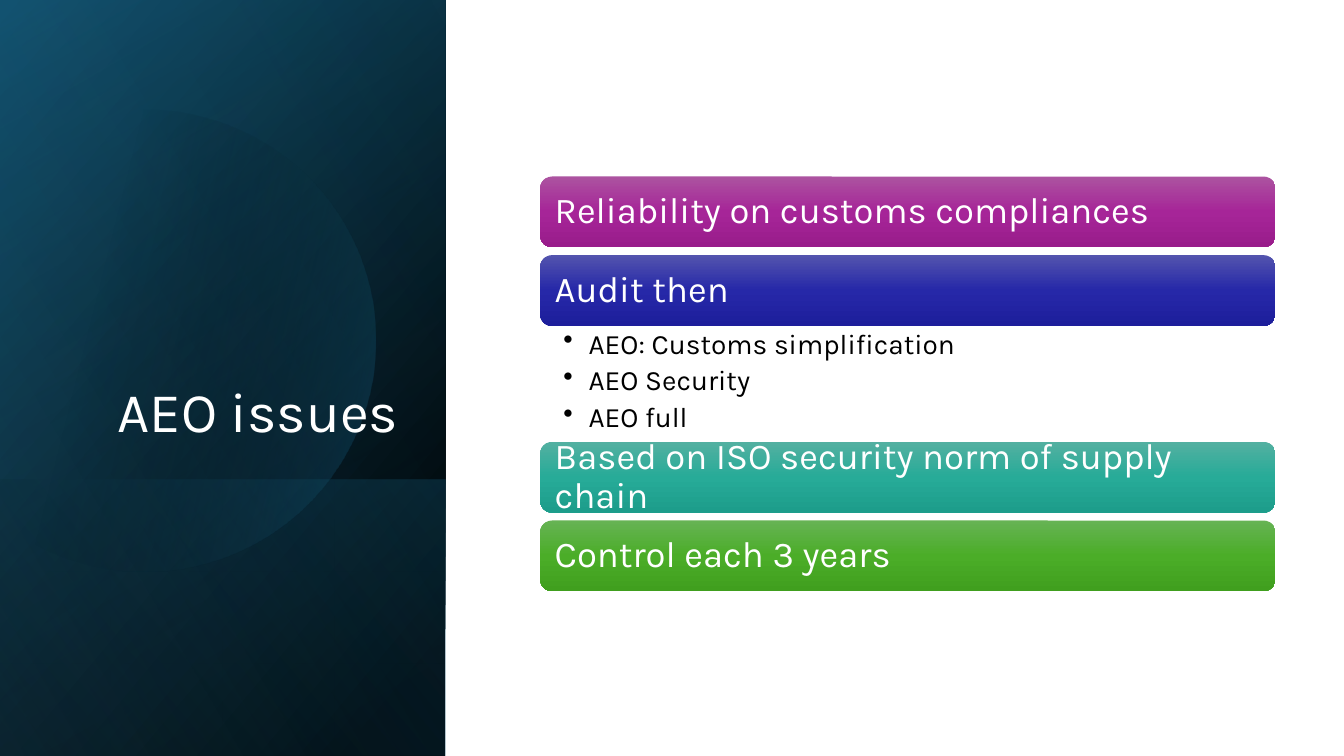
from math import acos, cos, sin

from pptx import Presentation
from pptx.dml.color import RGBColor
from pptx.enum.shapes import MSO_SHAPE as Shape
from pptx.enum.text import MSO_ANCHOR as Anchor, PP_ALIGN as Align
from pptx.oxml import parse_xml
from pptx.oxml.ns import nsdecls, qn
from pptx.util import Inches, Pt


def colour(code):
    """Turn a hex string into a colour."""
    return RGBColor.from_string(code)


class Sheet:
    """Holds the style and the current slide, on a grid of 100 columns by 100 rows."""

    font = "Karla"
    white = "FFFFFF"
    black = "000000"

    def __init__(self, deck):
        """Add a blank page and work out the grid."""
        self.page = deck.slides.add_slide(deck.slide_layouts[6])
        self.column = deck.slide_width / 100
        self.row = deck.slide_height / 100

    def place(self, left, top, width, height):
        """Turn columns and rows into lengths."""
        return [round(n * unit) for n, unit in zip((left, top, width, height), (self.column, self.row) * 2)]

    def shade(self, shape, stops, angle):
        """Fill a shape with a linear gradient of (position, colour, opacity) stops."""
        shape.shadow.inherit = False
        shape.line.fill.background()
        shape.fill.background()
        marks = "".join(
            f'<a:gs pos="{position * 1000}"><a:srgbClr val="{code}">'
            f'<a:alpha val="{opacity * 1000}"/></a:srgbClr></a:gs>'
            for position, code, opacity in stops
        )
        gradient = parse_xml(
            f'<a:gradFill {nsdecls("a")} rotWithShape="1"><a:gsLst>{marks}</a:gsLst>'
            f'<a:lin ang="{angle * 60000}" scaled="0"/></a:gradFill>'
        )
        properties = shape.element.spPr
        properties.replace(properties.find(qn("a:noFill")), gradient)

    def panel(self, top, width, height, stops, angle):
        """Draw a mirrored, quarter-turned gradient panel at the left edge."""
        left, top, width, height = self.place(0, top, width, height)
        shift = (width - height) // 2
        shape = self.page.shapes.add_shape(Shape.RECTANGLE, left + shift, top - shift, height, width)
        shape.rotation = 90
        shape.element.spPr.find(qn("a:xfrm")).set("flipH", "1")
        self.shade(shape, stops, angle)

    def disc(self, centre, middle, radius, stops, angle):
        """Draw a disc that is cut off by the left edge."""
        x, y, reach, _ = self.place(centre, middle, radius, 0)
        limit, steps = acos(-x / reach), 120
        turns = [limit * (2 * step / steps - 1) for step in range(steps + 1)]
        points = [(round(x + reach * cos(turn)), round(y + reach * sin(turn))) for turn in turns]
        outline = self.page.shapes.build_freeform(*points[0])
        outline.add_line_segments(points[1:], close=True)
        self.shade(outline.convert_to_shape(), stops, angle)

    def set_text(self, shape, lines, size, code, insets, anchor, align=Align.LEFT, gap=0, bullet=None):
        """Put one paragraph per line into a shape."""
        frame = shape.text_frame
        sides = ("margin_left", "margin_top", "margin_right", "margin_bottom")
        layout = dict(zip(sides, map(Inches, insets)), word_wrap=True, vertical_anchor=anchor)
        for name, value in layout.items():
            setattr(frame, name, value)
        for number, line in enumerate(lines):
            para = frame.add_paragraph() if number else frame.paragraphs[0]
            for name, value in {"alignment": align, "line_spacing": 0.9, "space_after": Pt(gap)}.items():
                setattr(para, name, value)
            if bullet:
                properties = para._p.get_or_add_pPr()
                properties.set("marL", str(Inches(0.25)))
                properties.set("indent", str(Inches(-0.25)))
                properties.append(parse_xml(f'<a:buChar {nsdecls("a")} char="{bullet}"/>'))
            span = para.add_run()
            span.text = line
            for name, value in {"name": self.font, "size": Pt(size)}.items():
                setattr(span.font, name, value)
            span.font.color.rgb = colour(code)

    def title(self, area, text):
        """Add the title, right-aligned at the foot of its box."""
        box = self.page.shapes.add_textbox(*self.place(*area))
        self.set_text(box, [text], 40, self.white, (0.1, 0.05, 0.1, 0.05), Anchor.BOTTOM, Align.RIGHT)

    def bar(self, area, text, codes):
        """Draw a rounded bar with its label."""
        shape = self.page.shapes.add_shape(Shape.ROUNDED_RECTANGLE, *self.place(*area))
        self.shade(shape, [(50 * step, code, 100) for step, code in enumerate(codes)], 90)
        self.set_text(shape, [text], 26, self.white, (0.11,) * 4, Anchor.MIDDLE)

    def bullets(self, area, lines):
        """Add a bulleted list."""
        box = self.page.shapes.add_textbox(*self.place(*area))
        self.set_text(box, lines, 20, self.black, (0.23, 0.04, 0.2, 0.04), Anchor.TOP, gap=4.5, bullet="•")


def main():
    """Build the slide and save it."""
    deck = Presentation()
    deck.slide_width, deck.slide_height = Inches(13.33), Inches(7.5)
    sheet = Sheet(deck)

    black, blue, side = "000000", "156082", 33.15
    sheet.panel(0, side, 100, [(8, black, 100), (100, "104862", 100)], 50)
    sheet.panel(0, side, 100, [(0, black, 0), (99, blue, 46)], 30)
    sheet.panel(63.47, side, 36.53, [(2, blue, 29), (100, black, 30)], 130)
    sheet.disc(10.73, 45.07, 17.18, [(29, black, 0), (100, blue, 43)], 14)
    sheet.panel(0, side, 100, [(0, black, 0), (99, "46B1E1", 11)], 120)
    sheet.title((4.8, 24.53, 25.58, 34.93), "AEO issues")

    left, top, width, height, gap, list_height = 40.2, 23.35, 54.7, 9.35, 1.05, 15.35
    topics = [
        ("Reliability on customs compliances", ("AC53A0", "A62598", "991C8B"), []),
        ("Audit then", ("5354AE", "2628A8", "1D1E9B"),
         ["AEO: Customs simplification", "AEO Security", "AEO full"]),
        ("Based on ISO security norm of supply chain", ("53B0A1", "27AB98", "1D9D8B"), []),
        ("Control each 3 years", ("66B354", "4BAD28", "409F1E"), []),
    ]
    for label, codes, details in topics:
        sheet.bar((left, top, width, height), label, codes)
        top += height
        if details:
            sheet.bullets((left, top, width, list_height), details)
        top += list_height if details else gap

    deck.save("out.pptx")


if __name__ == "__main__":
    main()
